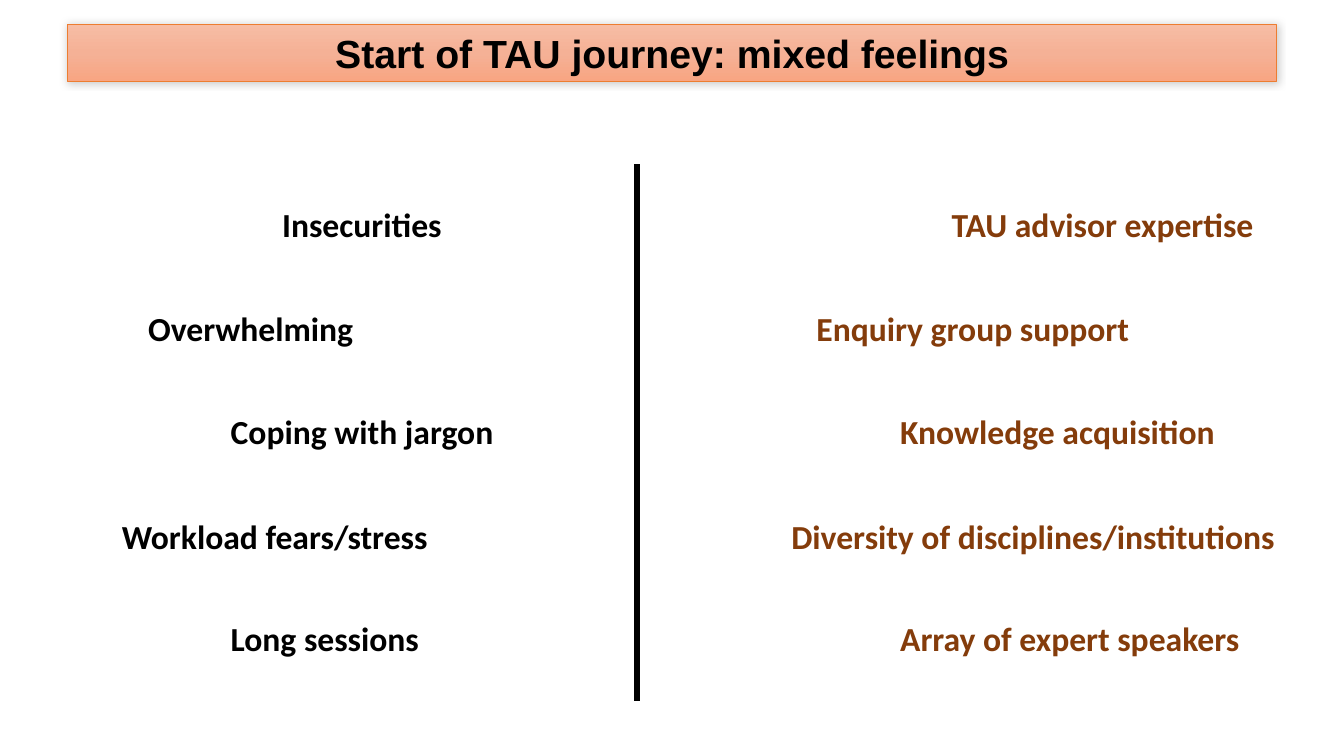
import copy

import pptx
import pptx.dml.color
import pptx.enum.shapes
import pptx.enum.text
import pptx.oxml
import pptx.oxml.ns
import pptx.util

EMU_PER_PX = 9144  # 100 px to the inch

BLACK = pptx.dml.color.RGBColor(0x00, 0x00, 0x00)
BROWN = pptx.dml.color.RGBColor(0x84, 0x3C, 0x0B)
ORANGE = pptx.dml.color.RGBColor(0xED, 0x7D, 0x31)
BANNER_STOPS = [
    (0.0, pptx.dml.color.RGBColor(0xF7, 0xBD, 0xA5)),
    (0.5, pptx.dml.color.RGBColor(0xF5, 0xB1, 0x96)),
    (1.0, pptx.dml.color.RGBColor(0xF8, 0xA5, 0x82)),
]

ROW_TOPS = [197, 301, 403, 507, 608]
FEELING_HEIGHT = 50

# Each feeling: text, left, width
WORRIES = [
    ("Insecurities", 270, 180),
    ("Overwhelming", 137, 226),
    ("Coping with jargon", 219, 283),
    ("Workload fears/stress", 111, 327),
    ("Long sessions", 219, 209),
]
STRENGTHS = [
    ("TAU advisor expertise", 934, 323),
    ("Enquiry group support", 800, 333),
    ("Knowledge acquisition", 883, 336),
    ("Diversity of disciplines/institutions", 775, 504),
    ("Array of expert speakers", 883, 374),
]


def px(length):
    return pptx.util.Emu(length * EMU_PER_PX)


def add_bold_run(paragraph, text, font_name, size, color):
    run = paragraph.add_run()
    run.text = text
    run.font.name = font_name
    run.font.size = pptx.util.Pt(size)
    run.font.bold = True
    run.font.color.rgb = color


def set_gradient(fill, stops):
    fill.gradient()
    fill.gradient_angle = 270
    stop_list = fill._xPr.find(".//" + pptx.oxml.ns.qn("a:gsLst"))
    stop_list.insert(1, copy.deepcopy(stop_list[0]))
    for stop, (position, color) in zip(fill.gradient_stops, stops):
        stop.position = position
        stop.color.rgb = color


def add_soft_shadow(shape):
    shape.shadow.inherit = False
    effects = shape._element.spPr.find(pptx.oxml.ns.qn("a:effectLst"))
    effects.append(pptx.oxml.parse_xml(
        f'<a:outerShdw {pptx.oxml.ns.nsdecls("a")} blurRad="76200" dist="0" '
        'dir="18900000" rotWithShape="0"><a:srgbClr val="000000">'
        '<a:alpha val="20000"/></a:srgbClr></a:outerShdw>'))


def add_banner(slide, text, left, top, width, height):
    banner = slide.shapes.add_shape(
        pptx.enum.shapes.MSO_SHAPE.RECTANGLE,
        px(left), px(top), px(width), px(height))
    set_gradient(banner.fill, BANNER_STOPS)
    banner.line.color.rgb = ORANGE
    banner.line.width = pptx.util.Pt(0.5)
    add_soft_shadow(banner)
    banner.text_frame.word_wrap = True
    banner.text_frame.auto_size = pptx.enum.text.MSO_AUTO_SIZE.SHAPE_TO_FIT_TEXT
    heading = banner.text_frame.paragraphs[0]
    heading.alignment = pptx.enum.text.PP_ALIGN.CENTER
    add_bold_run(heading, text, "Arial", 28, BLACK)


def add_feelings(slide, feelings, color):
    for top, (text, left, width) in zip(ROW_TOPS, feelings):
        feeling = slide.shapes.add_textbox(
            px(left), px(top), px(width), px(FEELING_HEIGHT))
        feeling.text_frame.word_wrap = False
        feeling.text_frame.auto_size = pptx.enum.text.MSO_AUTO_SIZE.SHAPE_TO_FIT_TEXT
        add_bold_run(feeling.text_frame.paragraphs[0], text, "Calibri", 24, color)


def add_divider(slide, x, top, bottom):
    divider = slide.shapes.add_connector(
        pptx.enum.shapes.MSO_CONNECTOR.STRAIGHT,
        px(x), px(top), px(x), px(bottom))
    divider.line.color.rgb = BLACK
    divider.line.width = pptx.util.Pt(4.5)
    divider._element.spPr.append(
        pptx.oxml.parse_xml(f'<a:effectLst {pptx.oxml.ns.nsdecls("a")}/>'))


def main():
    presentation = pptx.Presentation()
    presentation.slide_width = px(1333)
    presentation.slide_height = px(750)
    slide = presentation.slides.add_slide(presentation.slide_layouts[6])

    # Heading
    add_banner(slide, "Start of TAU journey: mixed feelings", 67, 24, 1199, 57)

    # Worries on the left, strengths on the right
    add_feelings(slide, WORRIES, BLACK)
    add_feelings(slide, STRENGTHS, BROWN)
    add_divider(slide, 632, 163, 695)

    presentation.save("out.pptx")


if __name__ == "__main__":
    main()
